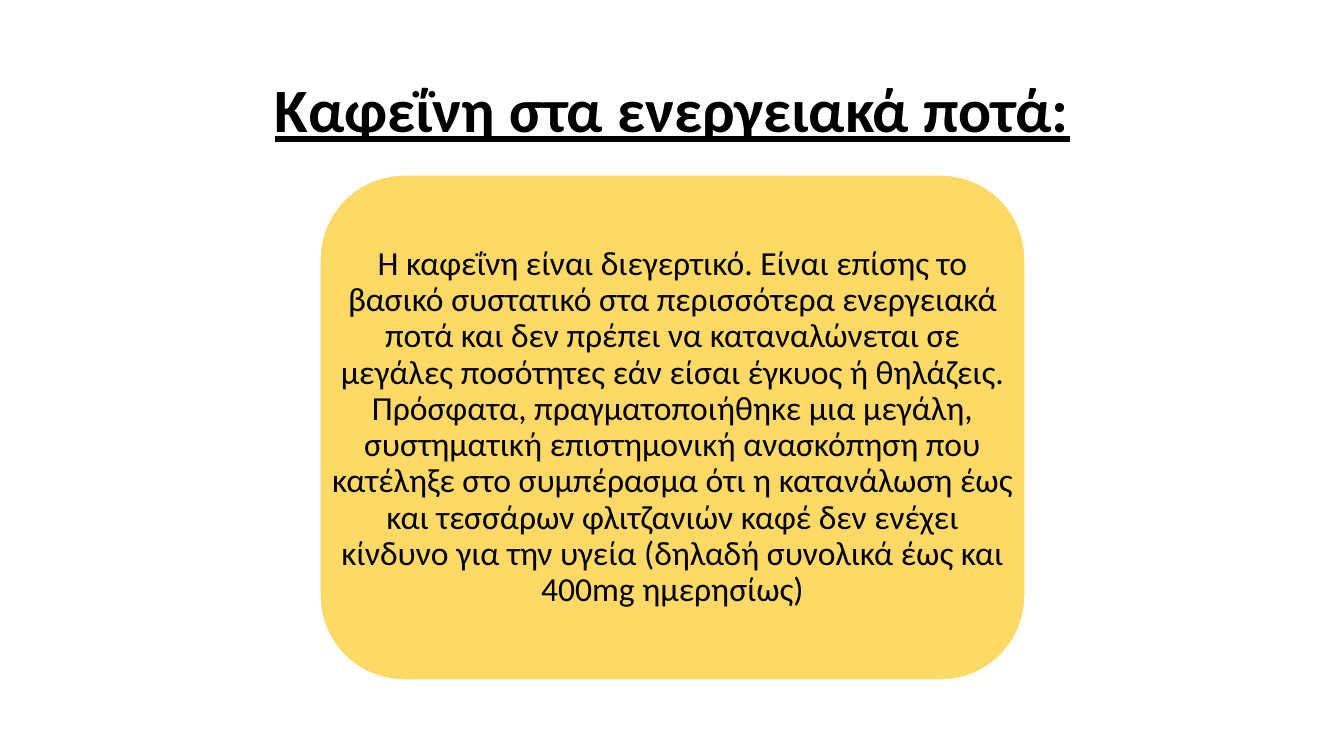
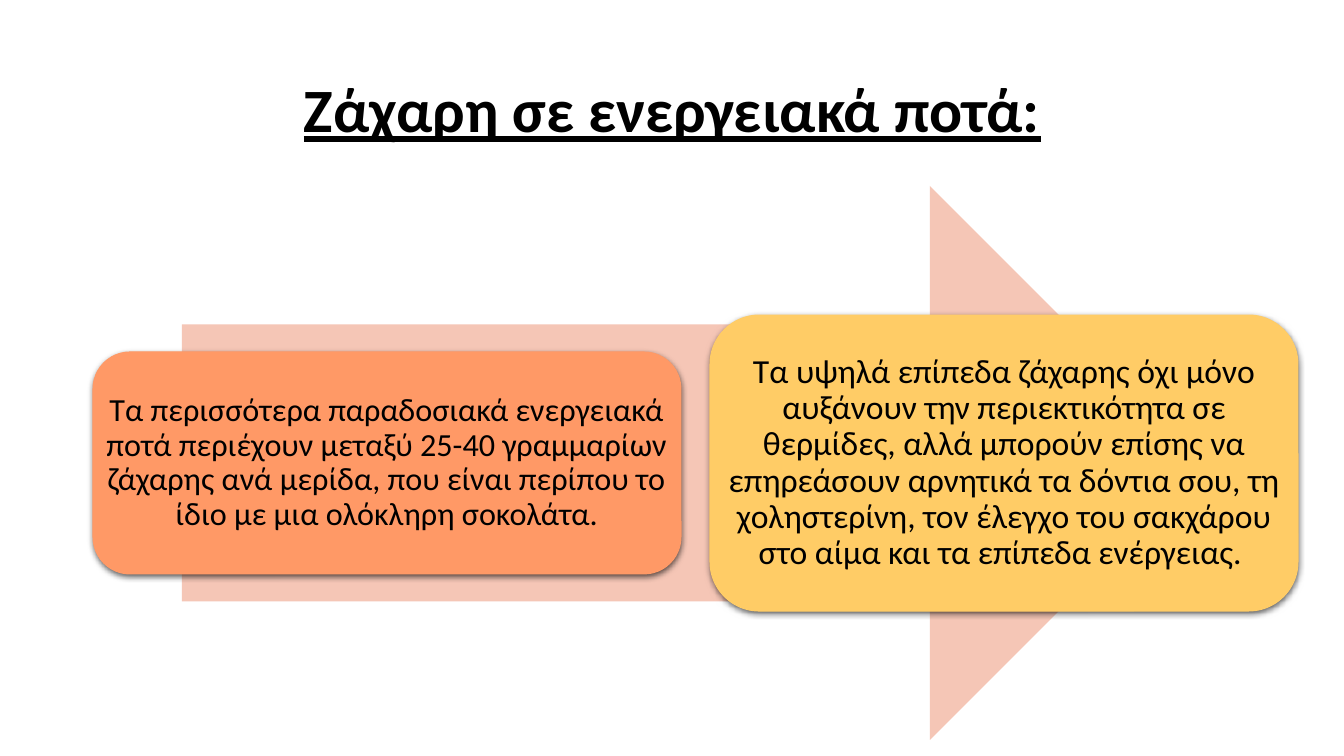
from lxml.etree import SubElement
from pptx import Presentation
from pptx.dml.color import RGBColor
from pptx.enum.shapes import MSO_SHAPE as SHAPE
from pptx.enum.text import MSO_ANCHOR as ANCHOR, MSO_AUTO_SIZE as AUTO, PP_ALIGN as ALIGN
from pptx.oxml.ns import qn
from pptx.util import Pt

BLACK = RGBColor(0x00, 0x00, 0x00)
WHITE = RGBColor(0xFF, 0xFF, 0xFF)
YELLOW = RGBColor(0xFF, 0xD9, 0x66)
AMBER = RGBColor(0xFF, 0xCC, 0x66)
ORANGE = RGBColor(0xFF, 0x99, 0x66)
PINK = RGBColor(0xF5, 0xC6, 0xB6)

FONT = "Calibri"
PX = 914400 / 100.8
SLIDE_W, SLIDE_H = 1344, 756
TITLE_BOX = (93, 40, 1159, 146)
TITLE_FORMAT = {"size": Pt(44), "bold": True, "underline": True}
INSET = 9

CAFFEINE_TITLE = "Καφεΐνη στα ενεργειακά ποτά:"
CAFFEINE_TEXT = (
    "Η καφεΐνη είναι διεγερτικό. Είναι επίσης το βασικό συστατικό στα περισσότερα "
    "ενεργειακά ποτά και δεν πρέπει να καταναλώνεται σε μεγάλες ποσότητες εάν είσαι "
    "έγκυος ή θηλάζεις. Πρόσφατα, πραγματοποιήθηκε μια μεγάλη, συστηματική επιστημονική "
    "ανασκόπηση που κατέληξε στο συμπέρασμα ότι η κατανάλωση έως και τεσσάρων φλιτζανιών "
    "καφέ δεν ενέχει κίνδυνο για την υγεία (δηλαδή συνολικά έως και 400mg ημερησίως)"
)
CAFFEINE_BOX = (320, 175, 705, 505)

SUGAR_TITLE = "Ζάχαρη σε ενεργειακά ποτά:"
SUGAR_CARDS = [
    ("Τα περισσότερα παραδοσιακά ενεργειακά ποτά περιέχουν μεταξύ 25-40 γραμμαρίων "
     "ζάχαρης ανά μερίδα, που είναι περίπου το ίδιο με μια ολόκληρη σοκολάτα.",
     ORANGE, 222, 23),
    ("Τα υψηλά επίπεδα ζάχαρης όχι μόνο αυξάνουν την περιεκτικότητα σε θερμίδες, αλλά "
     "μπορούν επίσης να επηρεάσουν αρνητικά τα δόντια σου, τη χοληστερίνη, τον έλεγχο "
     "του σακχάρου στο αίμα και τα επίπεδα ενέργειας. ",
     AMBER, 296, 24),
]
ARROW_BOX = (182, 186, 1025, 554)
CARD_LEFT, CARD_W, CARD_GAP = 93, 588, 29


def emu(box):
    return [round(v * PX) for v in box]


def write(tf, text, **formats):
    frame = {"word_wrap": True, "auto_size": AUTO.NONE, "vertical_anchor": ANCHOR.MIDDLE}
    for side in ("left", "top", "right", "bottom"):
        frame["margin_" + side] = round(INSET * PX)
    for name, value in frame.items():
        setattr(tf, name, value)
    p = tf.paragraphs[0]
    p.alignment, p.line_spacing = ALIGN.CENTER, 0.9
    r = p.add_run()
    r.text = text
    r.font.color.rgb = BLACK
    for name, value in {"name": FONT, **formats}.items():
        setattr(r.font, name, value)


def add_titled_slide(prs, title):
    s = prs.slides.add_slide(prs.slide_layouts[5])
    sp = s.shapes.title
    sp.left, sp.top, sp.width, sp.height = emu(TITLE_BOX)
    write(sp.text_frame, title, **TITLE_FORMAT)
    return s


def add_filled(s, kind, box, fill, line=None, line_pt=0.75):
    sp = s.shapes.add_shape(kind, *emu(box))
    sp.shadow.inherit = False
    sp.fill.solid()
    sp.fill.fore_color.rgb = fill
    if line is None:
        sp.line.fill.background()
    else:
        sp.line.color.rgb = line
        sp.line.width = Pt(line_pt)
    return sp


def add_shadow(sp):
    effects = sp._element.spPr.find(qn("a:effectLst"))
    shadow = SubElement(effects, qn("a:outerShdw"), blurRad=str(Pt(4.5)), dist=str(Pt(1.5)),
                        dir="5400000", algn="ctr", rotWithShape="0")
    color = SubElement(shadow, qn("a:srgbClr"), val=str(BLACK))
    SubElement(color, qn("a:alpha"), val="63000")


def add_card(s, box, text, size, fill, line, line_pt=0.75):
    sp = add_filled(s, SHAPE.ROUNDED_RECTANGLE, box, fill, line, line_pt)
    write(s.shapes.add_textbox(*emu(box)).text_frame, text, size=Pt(size))
    return sp


def build_caffeine(prs):
    s = add_titled_slide(prs, CAFFEINE_TITLE)
    add_card(s, CAFFEINE_BOX, CAFFEINE_TEXT, 24, YELLOW, WHITE, 1)


def build_sugar(prs):
    s = add_titled_slide(prs, SUGAR_TITLE)
    add_filled(s, SHAPE.RIGHT_ARROW, ARROW_BOX, PINK)
    middle = ARROW_BOX[1] + ARROW_BOX[3] / 2
    for i, (text, fill, height, size) in enumerate(SUGAR_CARDS):
        box = (CARD_LEFT + i * (CARD_W + CARD_GAP), middle - height / 2, CARD_W, height)
        add_shadow(add_card(s, box, text, size, fill, fill))


def main():
    prs = Presentation()
    prs.slide_width, prs.slide_height = emu((SLIDE_W, SLIDE_H))
    build_caffeine(prs)
    build_sugar(prs)
    prs.save("out.pptx")


if __name__ == "__main__":
    main()
